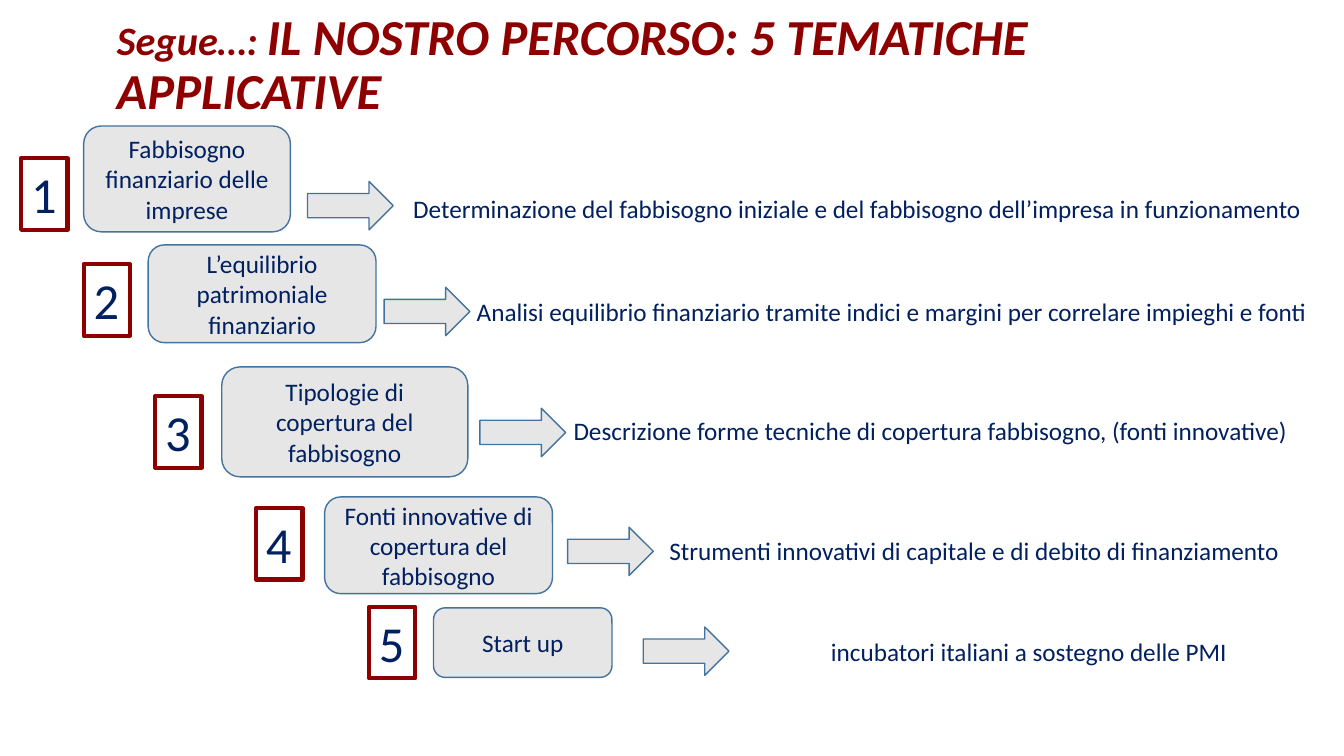
from dataclasses import dataclass

from pptx import Presentation
from pptx.dml.color import RGBColor
from pptx.enum.shapes import MSO_SHAPE
from pptx.enum.text import MSO_ANCHOR, MSO_AUTO_SIZE, PP_ALIGN
from pptx.util import Inches, Pt

ROUNDED, RECTANGLE, ARROW = (
    MSO_SHAPE.ROUNDED_RECTANGLE, MSO_SHAPE.RECTANGLE, MSO_SHAPE.RIGHT_ARROW)
TOP, MIDDLE = MSO_ANCHOR.TOP, MSO_ANCHOR.MIDDLE
LEFT, CENTER = PP_ALIGN.LEFT, PP_ALIGN.CENTER
NO_AUTOFIT = MSO_AUTO_SIZE.NONE
TITLE_ONLY = 5

# Grid of square cells, a tenth of an inch wide
COLUMNS, ROWS = 133.3, 75
CELL = Inches(0.1)
BADGE_SIZE = (4.6, 7.1)
ARROW_SIZE = (8.5, 4.8)
NOTE_HEIGHT = 4


@dataclass(frozen=True)
class Theme:
    font: str = "Calibri"
    accent: RGBColor = RGBColor(0x8E, 0x00, 0x00)
    ink: RGBColor = RGBColor(0x00, 0x20, 0x60)
    panel: RGBColor = RGBColor(0xE7, 0xE6, 0xE6)
    outline: RGBColor = RGBColor(0x43, 0x73, 0x9E)
    lead_size: float = 28.8
    large_size: float = 36
    body_size: float = 18


@dataclass(frozen=True)
class Step:
    """One theme; card, arrow and note are placed from the badge's corner."""
    origin: tuple
    card: tuple
    arrow: tuple
    note: tuple
    heading: str
    detail: str
    detail_align: PP_ALIGN = LEFT


THEME = Theme()

STEPS = [
    Step((2.1, 15.7), (6.2, -3.2, 20.5, 10.5), (28.4, 2.3), (37.9, 3, 91.2),
         "Fabbisogno finanziario delle imprese",
         "Determinazione del fabbisogno iniziale e del fabbisogno "
         "dell’impresa in funzionamento"),
    Step((8.3, 26.2), (6.4, -1.9, 22.6, 9.7), (29.8, 2.3), (38, 2.7, 85.9),
         "L’equilibrio patrimoniale\nfinanziario",
         "Analisi equilibrio finanziario tramite indici e margini "
         "per correlare impieghi e fonti"),
    Step((15.4, 39.3), (6.6, -2.9, 24.4, 10.9), (32.2, 1.2), (40.5, 1.4, 76.6),
         "Tipologie di\ncopertura del fabbisogno",
         "Descrizione forme tecniche di copertura fabbisogno, (fonti innovative)"),
    Step((25.4, 50.4), (6.8, -1.1, 22.6, 9.6), (30.9, 1.9), (40, 2.2, 63.3),
         "Fonti innovative di copertura del fabbisogno",
         "Strumenti innovativi di capitale e di debito di finanziamento"),
    Step((36.6, 60.2), (6.4, 0.1, 17.7, 6.9), (27.2, 2), (35.2, 2.4, 60.5),
         "Start up", "incubatori italiani a sostegno delle PMI", CENTER),
]


def cells(*lengths):
    return [round(length * CELL) for length in lengths]


def write(shape, text, size, align=LEFT, anchor=TOP, wrap=True):
    frame = shape.text_frame
    frame.text = text
    frame.word_wrap = wrap
    frame.vertical_anchor = anchor
    for para in frame.paragraphs:
        para.alignment = align
        para.font.name = THEME.font
        para.font.size = Pt(size)
        para.font.color.rgb = THEME.ink


def add_panel(page, kind, box, line_color, line_width, fill=None):
    shape = page.shapes.add_shape(kind, *cells(*box))
    shape.shadow.inherit = False
    if fill is None:
        shape.fill.background()
    else:
        shape.fill.solid()
        shape.fill.fore_color.rgb = fill
    shape.line.color.rgb = line_color
    shape.line.width = Pt(line_width)
    return shape


def add_title(page, box):
    title = page.shapes.title
    title.left, title.top, title.width, title.height = cells(*box)
    frame = title.text_frame
    frame.word_wrap = True
    frame.auto_size = NO_AUTOFIT
    frame.vertical_anchor = MIDDLE
    para = frame.paragraphs[0]
    para.alignment = LEFT
    para.line_spacing = 0.9
    para.font.name = THEME.font
    para.font.bold = para.font.italic = True
    para.font.color.rgb = THEME.accent
    for text, size in (("Segue…: ", THEME.lead_size),
                       ("IL NOSTRO PERCORSO: 5 TEMATICHE APPLICATIVE", THEME.large_size)):
        span = para.add_run()
        span.text = text
        span.font.size = Pt(size)


def add_step(page, number, step):
    left, top = step.origin

    def placed(across, down, width, height):
        return left + across, top + down, width, height

    card = add_panel(page, ROUNDED, placed(*step.card), THEME.outline, 1, THEME.panel)
    write(card, step.heading, THEME.body_size, CENTER, MIDDLE)

    badge = add_panel(page, RECTANGLE, placed(0, 0, *BADGE_SIZE), THEME.accent, 3)
    write(badge, str(number), THEME.large_size, wrap=False)

    add_panel(page, ARROW, placed(*step.arrow, *ARROW_SIZE), THEME.outline, 1, THEME.panel)

    note = page.shapes.add_textbox(*cells(*placed(*step.note, NOTE_HEIGHT)))
    write(note, step.detail, THEME.body_size, step.detail_align)


def main():
    deck = Presentation()
    deck.slide_width, deck.slide_height = cells(COLUMNS, ROWS)
    page = deck.slides.add_slide(deck.slide_layouts[TITLE_ONLY])
    add_title(page, (10.6, 4, 115, 5.1))
    for number, step in enumerate(STEPS, start=1):
        add_step(page, number, step)
    deck.save("out.pptx")


if __name__ == "__main__":
    main()
